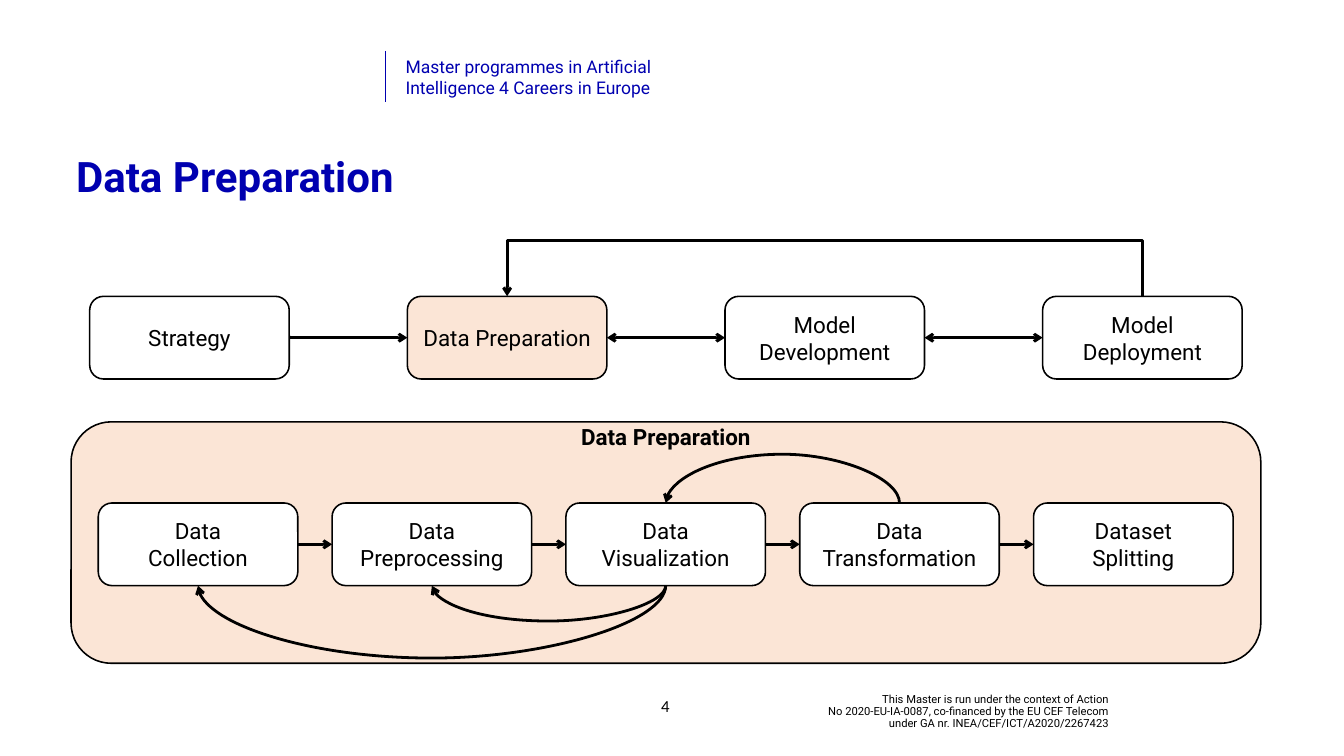
from pptx import Presentation
from pptx.dml.color import RGBColor
from pptx.enum.shapes import MSO_CONNECTOR as CONN, MSO_SHAPE as SHAPE
from pptx.enum.text import MSO_ANCHOR as ANCHOR, PP_ALIGN as ALIGN
from pptx.oxml import parse_xml
from pptx.oxml.ns import nsdecls, qn
from pptx.util import Emu, Inches, Pt

BLUE = RGBColor(0x00, 0x00, 0xB0)
BLACK = RGBColor(0, 0, 0)
WHITE = RGBColor(255, 255, 255)
PEACH = RGBColor(0xFB, 0xE5, 0xD6)

# Content
PROGRAMME = "Master programmes in Artificial\vIntelligence 4 Careers in Europe"
TITLE = "Data Preparation"
FOOTER = ("This Master is run under the context of Action\v"
          "No 2020-EU-IA-0087, co-financed by the EU CEF Telecom\v"
          "under GA nr. INEA/CEF/ICT/A2020/2267423")
PAGE = "4"
PHASES = ["Strategy", "Data Preparation", "Model Development", "Model Deployment"]
CURRENT = 1
STEPS = ["Data\nCollection", "Data\nPreprocessing", "Data\nVisualization",
         "Data\nTransformation", "Dataset\nSplitting"]
PHASE_LOOPS = [(3, 1, -1.08)]  # from, to, depth (negative is above)
STEP_LOOPS = [(2, 1, 0.69), (2, 0, 1.41), (3, 2, -0.95)]

# Layout, in inches
BOX_W, BOX_H = 3.96, 1.64
MARGIN, BODY_W = 1.41, 23.61
PHASE_X, PHASE_LAST_X, PHASE_Y = 1.78, 20.69, 5.88
PHASE_PITCH = (PHASE_LAST_X - PHASE_X) / (len(PHASES) - 1)
STEP_X, STEP_Y, STEP_PITCH = 1.95, 9.98, 4.64
PANEL_Y, PANEL_H, HEADING_H = 8.37, 4.79, 0.56

prs = Presentation()
prs.slide_width, prs.slide_height = Inches(26.67), Inches(15)
s = prs.slides.add_slide(prs.slide_layouts[6])


def write(sp, text, size=32, color=BLACK, font="Roboto", bold=False,
          align=ALIGN.LEFT, anchor=ANCHOR.TOP, spacing=None, inset=None):
    tf = sp.text_frame
    tf.word_wrap = True
    tf.vertical_anchor = anchor
    if inset is not None:
        tf.margin_left = tf.margin_right = Inches(inset)
        tf.margin_top = tf.margin_bottom = Inches(inset)
    tf.text = text
    for p in tf.paragraphs:
        p.alignment = align
        p.line_spacing = spacing
        for r in p.runs:
            r.font.name, r.font.size, r.font.bold = font, Pt(size), bold
            r.font.color.rgb = color


def add_label(x, y, w, h, text, **fmt):
    write(s.shapes.add_textbox(*map(Inches, (x, y, w, h))), text, **fmt)


def add_box(x, y, w, h, fill=WHITE):
    sp = s.shapes.add_shape(SHAPE.ROUNDED_RECTANGLE, *map(Inches, (x, y, w, h)))
    sp.shadow.inherit = False
    sp.fill.solid()
    sp.fill.fore_color.rgb = fill
    sp.line.color.rgb = BLACK
    sp.line.width = Pt(2.25)
    return sp


def add_line(kind, x1, y1, x2, y2, color=BLACK, width=4, ends=("tailEnd",)):
    c = s.shapes.add_connector(kind, *map(Inches, (x1, y1, x2, y2)))
    c.line.color.rgb = color
    c.line.width = Pt(width)
    ln = c.line._get_or_add_ln()
    for end in ends:
        ln.append(parse_xml(f'<a:{end} {nsdecls("a")} type="arrow"/>'))
    c._element.spPr.append(parse_xml(f'<a:effectLst {nsdecls("a")}/>'))
    return c


def add_arrow(left, right, ends=("tailEnd",)):
    c = add_line(CONN.STRAIGHT, 0, 0, 1, 1, ends=ends)
    c.begin_connect(left, 3)
    c.end_connect(right, 1)


def add_loop(kind, start, end, depth):
    """Loop back from start to end, turned so that its depth runs up or down."""
    thin = 3175
    span = start.left - end.left
    mid_x = (start.left + end.left + start.width) // 2
    y = start.top + (start.height if depth > 0 else 0)
    c = add_line(kind, 0, 0, 1, 1)
    c.left, c.top = Emu(mid_x - thin // 2), Emu(y - span // 2)
    c.width, c.height = Emu(thin), Emu(span)
    xfrm = c._element.spPr.find(qn("a:xfrm"))
    xfrm.set("rot", str((90 if depth > 0 else 270) * 60000))
    if depth < 0:
        xfrm.set("flipV", "1")
    geom = c._element.spPr.find(qn("a:prstGeom"))
    for old in list(geom):
        geom.remove(old)
    adj = round(abs(Inches(depth)) / thin * 100000)
    geom.append(parse_xml(f'<a:avLst {nsdecls("a")}>'
                          f'<a:gd name="adj1" fmla="val {adj}"/></a:avLst>'))


def add_row(texts, x, y, pitch, current=None):
    boxes = []
    for i, text in enumerate(texts):
        sp = add_box(x + i * pitch, y, BOX_W, BOX_H, PEACH if i == current else WHITE)
        write(sp, text, align=ALIGN.CENTER, anchor=ANCHOR.MIDDLE, inset=0.06)
        boxes.append(sp)
    return boxes


# Header, title and footer
add_line(CONN.STRAIGHT, 7.65, 1.01, 7.65, 2.03, color=BLUE, width=0.5, ends=())
add_label(7.95, 1.06, 6.37, 0.94, PROGRAMME, size=25, color=BLUE)
add_label(MARGIN, 2.96, BODY_W, 1.7, TITLE, size=60, color=BLUE, bold=True,
          spacing=Pt(70))
add_label(15.02, 13.74, 7.08, 0.76, FOOTER, size=16, align=ALIGN.RIGHT,
          anchor=ANCHOR.MIDDLE, spacing=0.9)
add_label(12.65, 13.61, 1.11, 0.8, PAGE, size=24, font="Calibri",
          align=ALIGN.CENTER, anchor=ANCHOR.MIDDLE)

# Project phases
phases = add_row(PHASES, PHASE_X, PHASE_Y, PHASE_PITCH, CURRENT)
for i, (left, right) in enumerate(zip(phases, phases[1:])):
    add_arrow(left, right, ("headEnd", "tailEnd") if i else ("tailEnd",))
for a, b, depth in PHASE_LOOPS:
    add_loop(CONN.ELBOW, phases[a], phases[b], depth)

# Data preparation panel, its heading at the top edge, and its steps
add_box(MARGIN, PANEL_Y, BODY_W, PANEL_H, PEACH)
add_label(MARGIN, PANEL_Y, BODY_W, HEADING_H, TITLE, bold=True,
          align=ALIGN.CENTER, inset=0.02)
steps = add_row(STEPS, STEP_X, STEP_Y, STEP_PITCH)
for left, right in zip(steps, steps[1:]):
    add_arrow(left, right)
for a, b, depth in STEP_LOOPS:
    add_loop(CONN.CURVE, steps[a], steps[b], depth)

prs.save("out.pptx")
